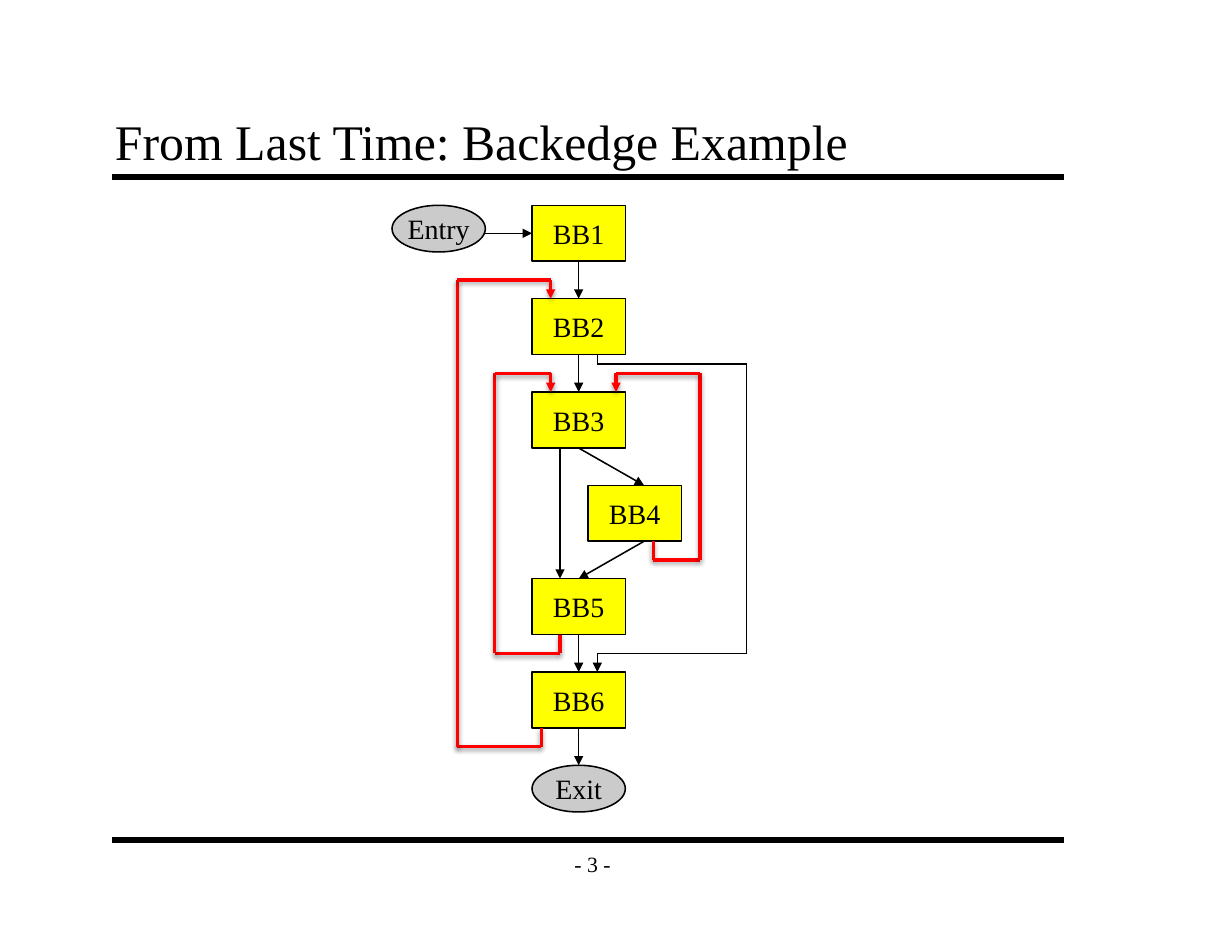
from dataclasses import dataclass

import pptx
import pptx.dml.color
import pptx.enum.shapes
import pptx.enum.text
import pptx.oxml
import pptx.oxml.ns
import pptx.util
from pptx.enum.shapes import MSO_CONNECTOR, MSO_SHAPE
from pptx.enum.text import MSO_ANCHOR, PP_ALIGN

# The slide is a grid of 132 columns by 102 rows, twelve to the inch.
COLUMNS, ROWS = 132, 102
CELL = pptx.util.Inches(1) // 12
FONT = "Times New Roman"
COLORS = {"ink": "000000", "block": "FFFF00", "terminal": "CBCBCB", "backedge": "FF0000"}
BLOCK_WIDTH, BLOCK_HEIGHT, TERMINAL_HEIGHT = 10, 6, 5
MAIN_COLUMN, SIDE_COLUMN, FIRST_ROW, ROW_STEP = 57, 63, 22, 10


@dataclass(frozen=True)
class Node:
    label: str
    column: int
    row: int
    terminal: bool = False


@dataclass(frozen=True)
class Edge:
    """A route through grid points that ends in an arrowhead."""
    points: tuple[tuple[int, int], ...]
    backedge: bool = False


BLOCKS = [
    Node(f"BB{n}", SIDE_COLUMN if n == 4 else MAIN_COLUMN, FIRST_ROW + (n - 1) * ROW_STEP)
    for n in range(1, 7)
]
TERMINALS = [
    Node("Entry", 42, FIRST_ROW, True),
    Node("Exit", MAIN_COLUMN, FIRST_ROW + 6 * ROW_STEP, True),
]
# Straight steps down the main column: from BB1, BB2, BB5 and BB6.
STEPS = [Edge(((62, row), (62, row + 4))) for row in (28, 38, 68, 78)]
FORWARD = [
    Edge(((52, 25), (57, 25))),
    Edge(((62, 48), (69, 52))),
    Edge(((69, 58), (62, 62))),
    Edge(((60, 48), (60, 62))),
    Edge(((64, 38), (64, 39), (80, 39), (80, 70), (64, 70), (64, 72))),
]
BACKEDGES = [
    Edge(((60, 68), (60, 70), (53, 70), (53, 40), (59, 40), (59, 42)), True),
    Edge(((70, 58), (70, 60), (75, 60), (75, 40), (66, 40), (66, 42)), True),
    Edge(((58, 78), (58, 80), (49, 80), (49, 30), (59, 30), (59, 32)), True),
]


def color(name: str) -> pptx.dml.color.RGBColor:
    return pptx.dml.color.RGBColor.from_string(COLORS[name])


def write(shape, text: str, size: int, align: PP_ALIGN, anchor: MSO_ANCHOR, wrap: bool) -> None:
    frame = shape.text_frame
    frame.word_wrap = wrap
    frame.vertical_anchor = anchor
    paragraph = frame.paragraphs[0]
    paragraph.alignment = align
    run = paragraph.add_run()
    run.text = text
    run.font.name = FONT
    run.font.size = pptx.util.Pt(size)
    run.font.color.rgb = color("ink")


def add_label(slide, box: tuple[int, int, int, int], text: str, size: int,
              align: PP_ALIGN, anchor: MSO_ANCHOR, wrap: bool) -> None:
    label = slide.shapes.add_textbox(*(CELL * length for length in box))
    frame = label.text_frame
    frame.margin_left = frame.margin_right = pptx.util.Inches(0.11)
    frame.margin_top = frame.margin_bottom = pptx.util.Inches(0.06)
    write(label, text, size, align, anchor, wrap)


def add_node(slide, node: Node) -> None:
    outline = MSO_SHAPE.OVAL if node.terminal else MSO_SHAPE.RECTANGLE
    height = TERMINAL_HEIGHT if node.terminal else BLOCK_HEIGHT
    shape = slide.shapes.add_shape(
        outline, *(CELL * n for n in (node.column, node.row, BLOCK_WIDTH, height)))
    shape.shadow.inherit = False
    shape.fill.solid()
    shape.fill.fore_color.rgb = color("terminal" if node.terminal else "block")
    shape.line.color.rgb = color("ink")
    shape.line.width = pptx.util.Pt(1)
    write(shape, node.label, 18, PP_ALIGN.CENTER, MSO_ANCHOR.MIDDLE, False)


def add_line(slide, start: tuple[int, int], end: tuple[int, int], stroke: str, width: int,
             arrow: bool = False, shadow: bool = False) -> None:
    line = slide.shapes.add_connector(
        MSO_CONNECTOR.STRAIGHT, *(CELL * n for n in (*start, *end)))
    line.line.color.rgb = color(stroke)
    line.line.width = pptx.util.Pt(width)
    properties = line._element.spPr
    namespace = pptx.oxml.ns.nsdecls("a")
    if arrow:
        properties.find(pptx.oxml.ns.qn("a:ln")).append(
            pptx.oxml.parse_xml(f'<a:tailEnd {namespace} type="triangle"/>'))
    effect = (
        f'<a:outerShdw blurRad="{pptx.util.Pt(3.1)}" dist="{pptx.util.Pt(1.6)}" '
        'dir="5400000" rotWithShape="0">'
        f'<a:srgbClr val="{COLORS["ink"]}"><a:alpha val="38000"/></a:srgbClr></a:outerShdw>'
    ) if shadow else ""
    properties.append(
        pptx.oxml.parse_xml(f"<a:effectLst {namespace}>{effect}</a:effectLst>"))


def add_edge(slide, edge: Edge) -> None:
    stroke, width = ("backedge", 2) if edge.backedge else ("ink", 1)
    for start, end in zip(edge.points, edge.points[1:]):
        add_line(slide, start, end, stroke, width,
                 arrow=end == edge.points[-1], shadow=edge.backedge)


def main() -> None:
    deck = pptx.Presentation()
    deck.slide_width, deck.slide_height = CELL * COLUMNS, CELL * ROWS
    slide = deck.slides.add_slide(deck.slide_layouts[6])

    for rule_row in (19, 90):
        add_line(slide, (12, rule_row), (114, rule_row), "ink", 4)
    add_label(slide, (59, 90, 9, 5), "- 3 -", 14,
              PP_ALIGN.CENTER, MSO_ANCHOR.MIDDLE, False)
    add_label(slide, (11, 11, 102, 8), "From Last Time: Backedge Example", 32,
              PP_ALIGN.LEFT, MSO_ANCHOR.BOTTOM, True)

    for node in BLOCKS + TERMINALS:
        add_node(slide, node)
    for edge in STEPS + FORWARD + BACKEDGES:
        add_edge(slide, edge)

    deck.save("out.pptx")


if __name__ == "__main__":
    main()
